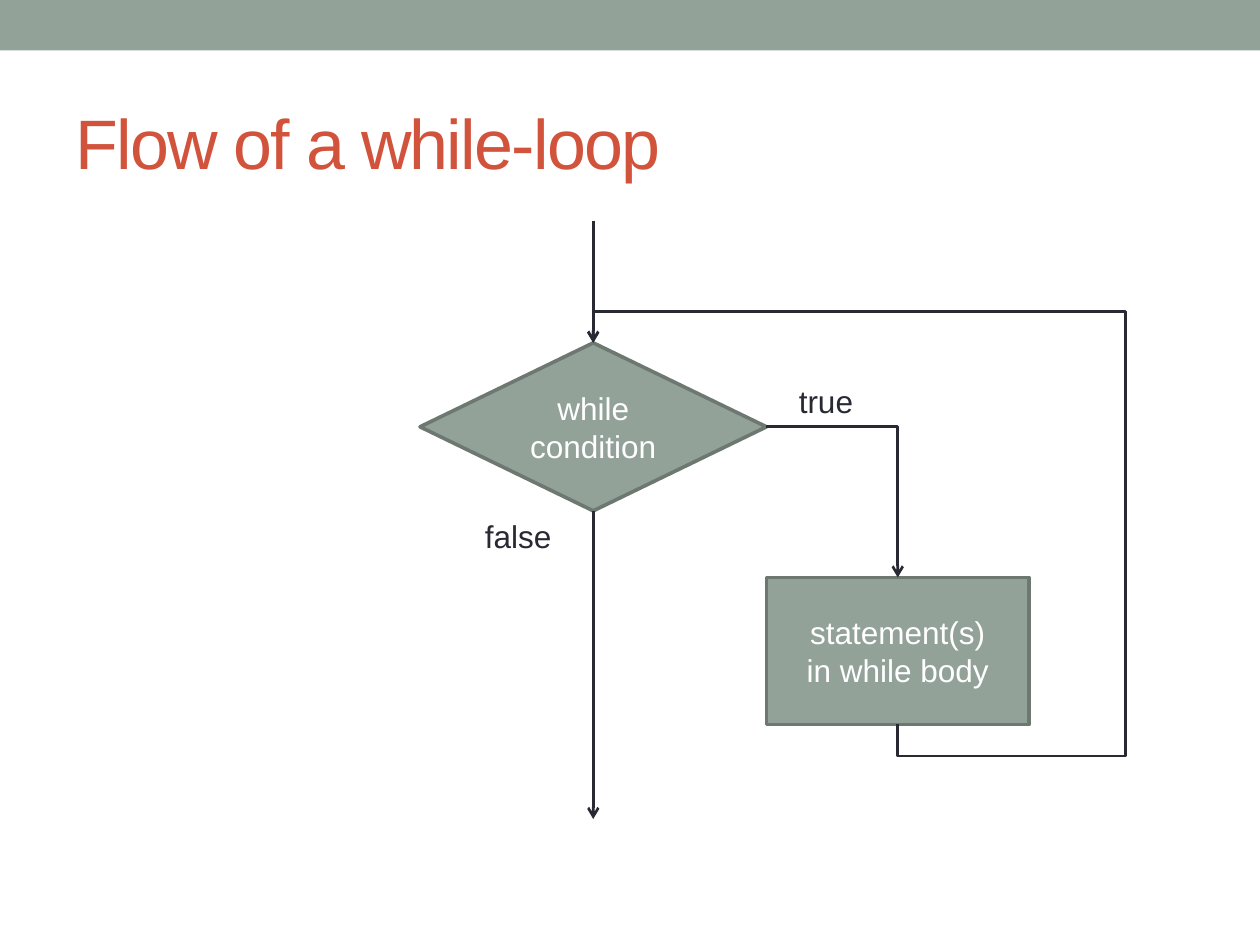
from dataclasses import dataclass
from typing import Any

from lxml import etree
from pptx import Presentation
from pptx.dml.color import RGBColor
from pptx.enum.shapes import MSO_CONNECTOR, MSO_SHAPE
from pptx.enum.text import MSO_ANCHOR, PP_ALIGN
from pptx.oxml.ns import qn
from pptx.util import Inches, Pt

STRAIGHT = MSO_CONNECTOR.STRAIGHT
RECTANGLE = MSO_SHAPE.RECTANGLE
DECISION = MSO_SHAPE.FLOWCHART_DECISION
PROCESS = MSO_SHAPE.FLOWCHART_PROCESS
MIDDLE, TOP = MSO_ANCHOR.MIDDLE, MSO_ANCHOR.TOP
LEFT, CENTER = PP_ALIGN.LEFT, PP_ALIGN.CENTER

SAGE = RGBColor(0x93, 0xA2, 0x99)
MOSS = RGBColor(0x6D, 0x78, 0x71)
RUST = RGBColor(0xD2, 0x53, 0x3C)
INK = RGBColor(0x29, 0x29, 0x34)
WHITE = RGBColor(0xFF, 0xFF, 0xFF)


@dataclass
class FlowSlide:
    """Draws flowchart parts on a grid of 120 columns by 90 rows."""

    page: Any
    font: str = "Arial"
    size: float = 18
    cell: int = Inches(1) // 12

    def grid(self, *cells):
        return [round(count * self.cell) for count in cells]

    def add_lines(self, shape, lines, color, size=None, align=LEFT, anchor=TOP, spacing=None):
        frame = shape.text_frame
        frame.vertical_anchor = anchor
        for index, line in enumerate(lines):
            para = frame.add_paragraph() if index else frame.paragraphs[0]
            para.alignment = align
            span = para.add_run()
            span.text = line
            span.font.name = self.font
            span.font.size = Pt(size or self.size)
            span.font.color.rgb = color
            if spacing:
                span._r.get_or_add_rPr().set("spc", str(spacing))

    def text(self, place, line, color=INK, wrap=False, **style):
        box = self.page.shapes.add_textbox(*self.grid(*place))
        box.text_frame.word_wrap = wrap
        self.add_lines(box, [line], color, **style)

    def box(self, kind, place, lines=(), outline=None):
        shape = self.page.shapes.add_shape(kind, *self.grid(*place))
        shape.shadow.inherit = False
        shape.fill.solid()
        shape.fill.fore_color.rgb = SAGE
        if outline:
            shape.line.color.rgb = outline
            shape.line.width = Pt(2.08)
        else:
            shape.line.fill.background()
        self.add_lines(shape, lines, WHITE, align=CENTER, anchor=MIDDLE)

    def arrow(self, *points):
        start, *others = [self.grid(*point) for point in points]
        if len(others) == 1:
            route = self.page.shapes.add_connector(STRAIGHT, *start, *others[0])
        else:
            builder = self.page.shapes.build_freeform(*start)
            builder.add_line_segments(others, close=False)
            route = builder.convert_to_shape()
            route.fill.background()
        route.line.color.rgb = INK
        route.line.width = Pt(1.5)
        properties = route._element.spPr
        etree.SubElement(properties.find(qn("a:ln")), qn("a:tailEnd"), type="arrow")
        etree.SubElement(properties, qn("a:effectLst"))


def main():
    deck = Presentation()
    deck.slide_width, deck.slide_height = Inches(10), Inches(7.5)
    flow = FlowSlide(deck.slides.add_slide(deck.slide_layouts[6]))

    flow.box(RECTANGLE, (0, 0, 120, 4.8))
    flow.text((6, 7, 108, 13), "Flow of a while-loop", RUST, wrap=True,
              size=40, anchor=MIDDLE, spacing=-100)

    decision_left, decision_top, decision_width, decision_height = 40, 32.65, 33, 16
    body_left, body_top, body_width, body_height = 73, 55, 25, 14
    flow.box(DECISION, (decision_left, decision_top, decision_width, decision_height),
             ["while", "condition"], MOSS)
    flow.box(PROCESS, (body_left, body_top, body_width, body_height),
             ["statement(s)", "in while body"], MOSS)

    main_column = decision_left + decision_width / 2
    body_column = body_left + body_width / 2
    decision_middle = decision_top + decision_height / 2
    decision_bottom = decision_top + decision_height
    body_bottom = body_top + body_height
    return_column, detour = 107.2, 3

    flow.arrow((decision_left + decision_width, decision_middle),
               (body_column, decision_middle), (body_column, body_top))
    flow.arrow((main_column, decision_bottom), (main_column, 78))
    flow.arrow((main_column, 21), (main_column, decision_top))
    flow.arrow((body_column, body_bottom), (body_column, body_bottom + detour),
               (return_column, body_bottom + detour),
               (return_column, decision_top - detour),
               (main_column, decision_top - detour), (main_column, decision_top))

    flow.text((45, decision_bottom, 8.8, 4.8), "false")
    flow.text((74.9, 35.8, 7.7, 4.8), "true")
    deck.save("out.pptx")


if __name__ == "__main__":
    main()
